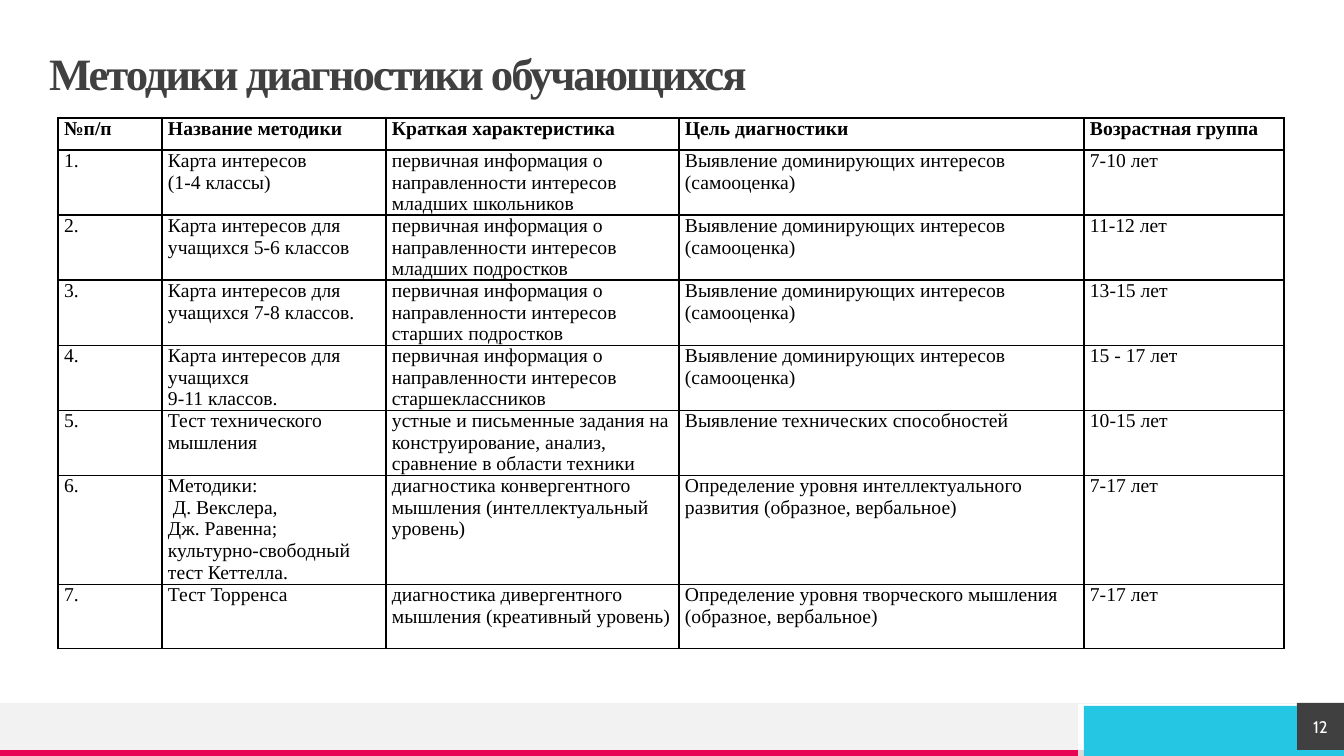
from pptx import Presentation
from pptx.dml.color import RGBColor
from pptx.enum.shapes import MSO_CONNECTOR, MSO_SHAPE
from pptx.enum.text import MSO_ANCHOR, MSO_AUTO_SIZE, PP_ALIGN
from pptx.oxml.ns import qn
from pptx.util import Pt
from lxml import etree

RECTANGLE = MSO_SHAPE.RECTANGLE
STRAIGHT = MSO_CONNECTOR.STRAIGHT
MIDDLE = MSO_ANCHOR.MIDDLE
NO_FIT = MSO_AUTO_SIZE.NONE
LEFT, CENTER = PP_ALIGN.LEFT, PP_ALIGN.CENTER

SCALE = 914400 / 100.8
SERIF = "Times New Roman"
TITLE = "Методики диагностики обучающихся"
TITLE_BOX = (49, 52, 1249, 47)
PAGE_NUMBER = "12"
INTERESTS = "Выявление доминирующих интересов (самооценка)"
PRIMARY = "первичная информация о направленности интересов "
INDENTED = "Д. Векслера,"

ROWS = [
    ("№п/п", "Название методики", "Краткая характеристика",
     "Цель диагностики", "Возрастная группа"),
    ("1.", "Карта интересов\n(1-4 классы)",
     PRIMARY + "младших школьников", INTERESTS, "7-10 лет"),
    ("2.", "Карта интересов для учащихся 5-6 классов",
     PRIMARY + "младших подростков", INTERESTS, "11-12 лет"),
    ("3.", "Карта интересов для учащихся 7-8 классов.",
     PRIMARY + "старших подростков", INTERESTS, "13-15 лет"),
    ("4.", "Карта интересов для учащихся\n9-11 классов.",
     PRIMARY + "старшеклассников", INTERESTS, "15 - 17 лет"),
    ("5.", "Тест технического мышления",
     "устные и письменные задания на конструирование, анализ, сравнение в области техники",
     "Выявление технических способностей", "10-15 лет"),
    ("6.", "Методики:\n" + INDENTED + "\nДж. Равенна;\nкультурно-свободный тест Кеттелла.",
     "диагностика конвергентного мышления (интеллектуальный уровень)",
     "Определение уровня интеллектуального развития (образное, вербальное)", "7-17 лет"),
    ("7.", "Тест Торренса",
     "диагностика дивергентного мышления (креативный уровень)",
     "Определение уровня творческого мышления (образное, вербальное)", "7-17 лет"),
]
TABLE_ORIGIN = (58, 118)
COLUMN_WIDTHS = [104, 224, 293, 405, 200]
ROW_HEIGHTS = [32, 65, 65, 65, 65, 65, 109, 64]

FOOTER_BARS = [
    ((1078, 750, 219, 6), "DADADA"),
    ((0, 703, 1078, 47), "F2F2F2"),
    ((0, 750, 1078, 6), "E80554"),
    ((1297, 750, 47, 6), "25C6E3"),
]
NUMBER_BOX = (1297, 703, 47, 47)
ACCENT_BOX = (1084, 706, 213, 50)

TITLE_FONT = {"name": SERIF, "size": Pt(32), "bold": True}
HEADER_FONT = {"name": SERIF, "size": Pt(14), "bold": True}
BODY_FONT = {"name": SERIF, "size": Pt(14), "bold": False}
NUMBER_FONT = {"name": "Cabin", "size": Pt(12), "bold": False}
NO_MARGINS = {"margin_left": 0, "margin_top": 0, "margin_right": 0, "margin_bottom": 0}


def px(value):
    return round(value * SCALE)


def color(value):
    return RGBColor.from_string(value)


def set_all(target, values):
    for name, value in values.items():
        setattr(target, name, value)


def set_font(font, values, tone):
    set_all(font, values)
    font.color.rgb = color(tone)


def add_bar(page, place, tone):
    bar = page.shapes.add_shape(RECTANGLE, *map(px, place))
    bar.shadow.inherit = False
    bar.fill.solid()
    bar.fill.fore_color.rgb = color(tone)
    bar.line.fill.background()
    return bar


def add_borders(cell):
    properties = cell._tc.get_or_add_tcPr()
    for side in ("a:lnL", "a:lnR", "a:lnT", "a:lnB"):
        border = etree.SubElement(properties, qn(side), w=str(Pt(1)))
        fill = etree.SubElement(border, qn("a:solidFill"))
        etree.SubElement(fill, qn("a:srgbClr"), val="000000")


def fill_cell(cell, text, font):
    set_all(cell, {**NO_MARGINS, "margin_left": px(6), "margin_right": px(6)})
    add_borders(cell)
    cell.fill.background()
    cell.text = text
    for para in cell.text_frame.paragraphs:
        if para.text == INDENTED:
            para._p.get_or_add_pPr().set("marL", str(px(5)))
        for span in para.runs:
            set_font(span.font, font, "000000")


def add_title(page):
    title = page.shapes.title
    set_all(title, dict(zip(("left", "top", "width", "height"), map(px, TITLE_BOX))))
    frame = title.text_frame
    set_all(frame, {**NO_MARGINS, "vertical_anchor": MIDDLE,
                    "word_wrap": True, "auto_size": NO_FIT})
    para = frame.paragraphs[0]
    set_all(para, {"alignment": LEFT, "line_spacing": 0.9})
    span = para.add_run()
    span.text = TITLE
    set_font(span.font, TITLE_FONT, "404040")
    span._r.get_or_add_rPr().set("spc", "-150")


def add_footer(page):
    for place, tone in FOOTER_BARS:
        add_bar(page, place, tone)
    rule = page.shapes.add_connector(STRAIGHT, px(1344), px(703), 0, px(703))
    rule.line.color.rgb = color("F2F2F2")
    rule.line.width = Pt(0.5)
    etree.SubElement(rule._element.spPr, qn("a:effectLst"))
    number = add_bar(page, NUMBER_BOX, "404040")
    set_all(number.text_frame, {**NO_MARGINS, "vertical_anchor": MIDDLE})
    para = number.text_frame.paragraphs[0]
    para.alignment = CENTER
    span = para.add_run()
    span.text = PAGE_NUMBER
    set_font(span.font, NUMBER_FONT, "FFFFFF")


def add_methods(page):
    size = (sum(COLUMN_WIDTHS), sum(ROW_HEIGHTS))
    table = page.shapes.add_table(len(ROWS), len(COLUMN_WIDTHS),
                                  *map(px, TABLE_ORIGIN + size)).table
    set_all(table, {"first_row": False, "horz_banding": False})
    for column, width in zip(table.columns, COLUMN_WIDTHS):
        column.width = px(width)
    for index, (row, height, texts) in enumerate(zip(table.rows, ROW_HEIGHTS, ROWS)):
        row.height = px(height)
        for cell, text in zip(row.cells, texts):
            fill_cell(cell, text, BODY_FONT if index else HEADER_FONT)


def main():
    deck = Presentation()
    set_all(deck, {"slide_width": px(1344), "slide_height": px(756)})
    page = deck.slides.add_slide(deck.slide_layouts[5])
    add_footer(page)
    add_title(page)
    add_methods(page)
    add_bar(page, ACCENT_BOX, "25C6E3")
    deck.save("out.pptx")


if __name__ == "__main__":
    main()
